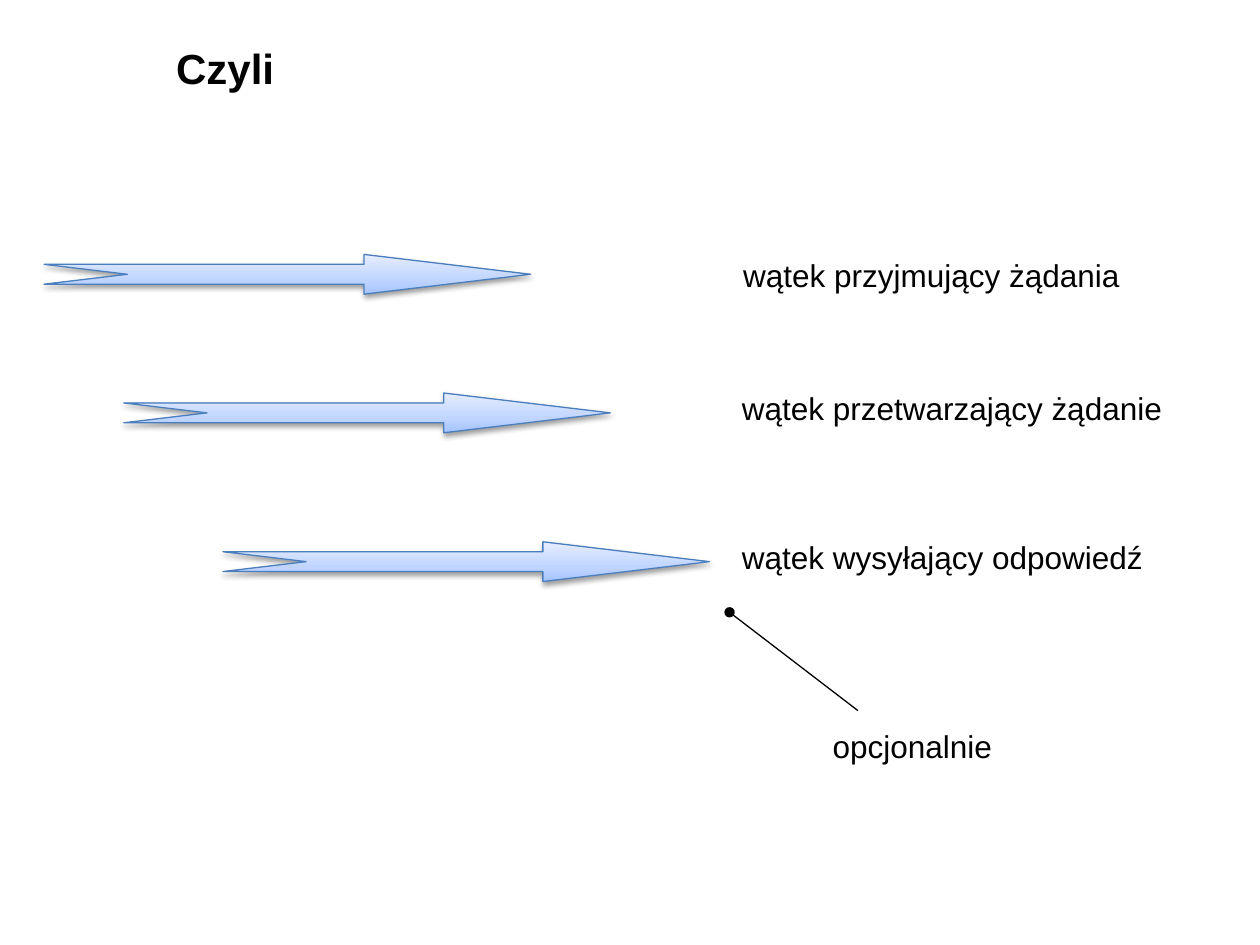
from lxml import etree
from pptx import Presentation
from pptx.dml.color import RGBColor
from pptx.enum.shapes import MSO_CONNECTOR, MSO_SHAPE
from pptx.enum.text import MSO_ANCHOR, MSO_AUTO_SIZE
from pptx.oxml import parse_xml
from pptx.oxml.ns import nsdecls, qn
from pptx.util import Pt

COLORS = {
    "text": "000000",
    "arrow_line": "4B7EBC",
    "arrow_bottom": "A4C4FF",
    "arrow_middle": "BFD4FF",
    "arrow_top": "E6EEFF",
    "shadow": "000000",
}
GRADIENT_STOPS = [(0, "arrow_bottom"), (35, "arrow_middle"), (100, "arrow_top")]


def add_text(text, left, top, width, height, wrap=False, **font_format):
    shape = slide.shapes.add_textbox(Pt(left), Pt(top), Pt(width), Pt(height))
    frame = shape.text_frame
    frame.word_wrap = wrap
    frame.text = text
    font = frame.paragraphs[0].font
    for name, value in {"name": "Arial", "size": Pt(18), **font_format}.items():
        setattr(font, name, value)
    font.color.rgb = RGBColor.from_string(COLORS["text"])
    return frame


presentation = Presentation()
presentation.slide_width, presentation.slide_height = Pt(720), Pt(540)
slide = presentation.slides.add_slide(presentation.slide_layouts[6])

# Title
title = add_text("Czyli", 93.6, 20.16, 607, 36.7, wrap=True, size=Pt(24), bold=True)
title.vertical_anchor = MSO_ANCHOR.MIDDLE

# Thread arrows, each starting later than the one before
for left, top in [(25.2, 145.4), (70.7, 224.6), (127.4, 309.6)]:
    arrow = slide.shapes.add_shape(
        MSO_SHAPE.NOTCHED_RIGHT_ARROW, Pt(left), Pt(top), Pt(278), Pt(22.7))
    arrow.adjustments[0] = 0.5
    arrow.adjustments[1] = 4.19
    arrow.line.color.rgb = RGBColor.from_string(COLORS["arrow_line"])
    arrow.line.width = Pt(0.75)

    # Three-stop gradient, running from bottom to top
    stops = "".join(
        f'<a:gs pos="{position * 1000}"><a:srgbClr val="{COLORS[name]}"/></a:gs>'
        for position, name in GRADIENT_STOPS)
    gradient = parse_xml(
        f'<a:gradFill {nsdecls("a")} rotWithShape="1"><a:gsLst>{stops}</a:gsLst>'
        '<a:lin ang="16200000" scaled="0"/></a:gradFill>')
    properties = arrow._element.spPr
    properties.find(qn("a:prstGeom")).addnext(gradient)

    # Soft shadow below
    arrow.shadow.inherit = False
    properties.find(qn("a:effectLst")).append(parse_xml(
        f'<a:outerShdw {nsdecls("a")} blurRad="{Pt(3.1)}" dist="{Pt(1.6)}" '
        f'dir="5400000" rotWithShape="0"><a:srgbClr val="{COLORS["shadow"]}">'
        '<a:alpha val="38000"/></a:srgbClr></a:outerShdw>'))

# Labels
for text, left, top, width in [
    ("wątek przyjmujący żądania", 417.6, 142.6, 231.8),
    ("wątek przetwarzający żądanie", 416.9, 218.9, 257),
    ("wątek wysyłający odpowiedź", 416.9, 303.8, 245.5),
    ("opcjonalnie", 468.7, 411.8, 106.6),
]:
    label = add_text(text, left, top, width, 28.8)
    label.auto_size = MSO_AUTO_SIZE.SHAPE_TO_FIT_TEXT

# Pointer from the optional note to the sending thread
pointer = slide.shapes.add_connector(
    MSO_CONNECTOR.STRAIGHT, Pt(490.3), Pt(406.1), Pt(416.9), Pt(349.9))
pointer.line.color.rgb = RGBColor.from_string(COLORS["text"])
pointer.line.width = Pt(0.75)
etree.SubElement(pointer.line._get_or_add_ln(), qn("a:tailEnd"), type="oval")
etree.SubElement(pointer._element.spPr, qn("a:effectLst"))

presentation.save("out.pptx")
